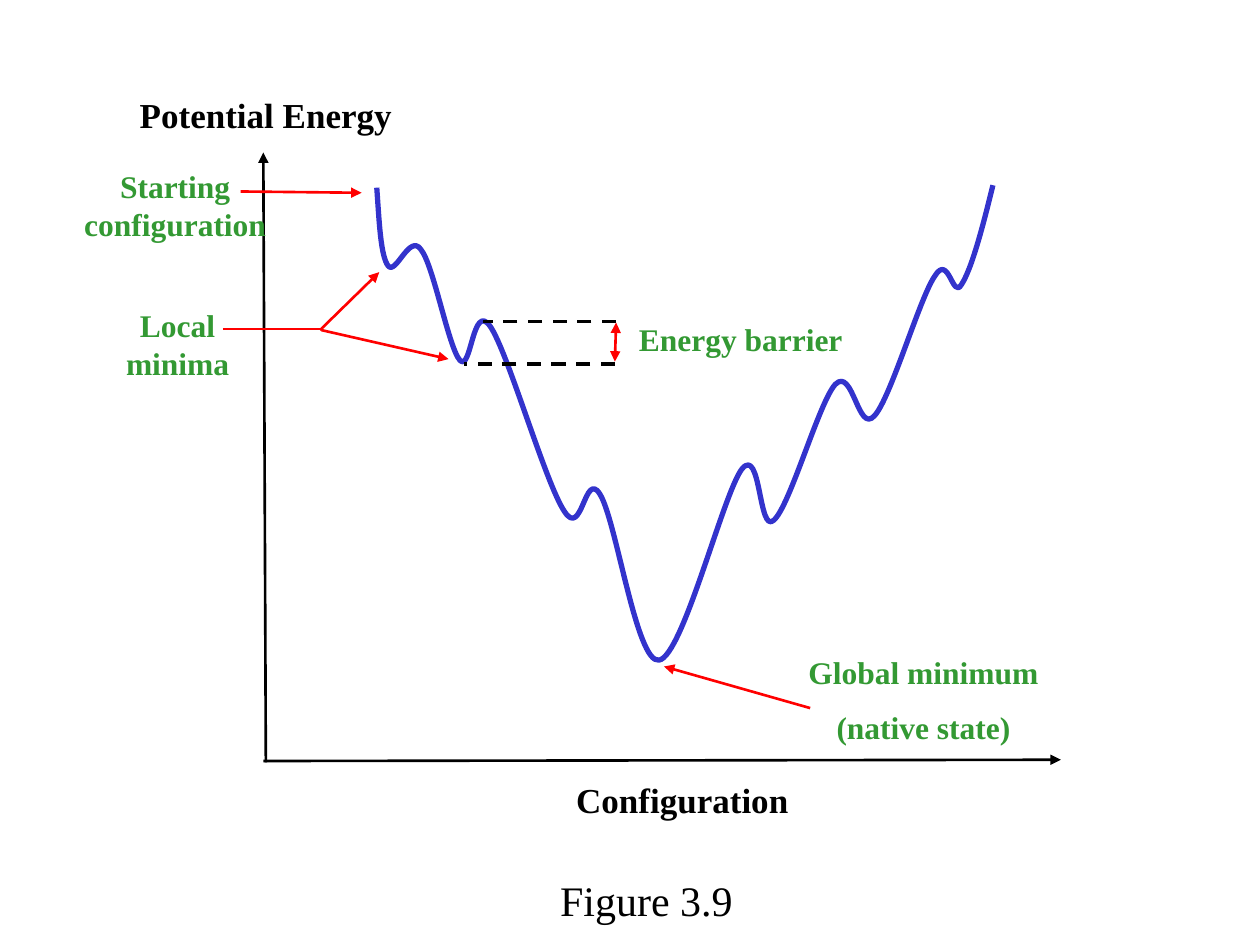
from pptx import Presentation
from pptx.util import Inches, Pt
from pptx.dml.color import RGBColor
from pptx.enum.dml import MSO_LINE
from pptx.enum.shapes import MSO_CONNECTOR
from pptx.enum.text import PP_ALIGN
from pptx.oxml.ns import qn
from lxml.etree import SubElement

WIDE, HIGH = 10, 7.5
COLS, ROWS = 100, 75
BLACK, RED, GREEN, BLUE = "000000", "FF0000", "339933", "3333CC"


def tint(code):
    return RGBColor.from_string(code)


def across(cols):
    return Inches(WIDE * cols / COLS)


def down(rows):
    return Inches(HIGH * rows / ROWS)


class Board:
    font = "Times New Roman"

    def __init__(self, deck):
        self.slide = deck.slides.add_slide(deck.slide_layouts[6])
        self.shapes = self.slide.shapes

    def label(self, text, left, top, width, height, size=18, color=GREEN, bold=True):
        box = self.shapes.add_textbox(across(left), down(top), across(width), down(height))
        frame = box.text_frame
        frame.word_wrap = True
        frame.text = text
        for i, para in enumerate(frame.paragraphs):
            para.alignment = PP_ALIGN.CENTER
            para.space_before = Pt(size * 0.55 if i else 0)
            for run in para.runs:
                run.font.name = self.font
                run.font.size = Pt(size)
                run.font.bold = bold
                run.font.color.rgb = tint(color)

    def line(self, start, end, color=RED, width=1.5, ends=("tailEnd",), dash=False):
        link = self.shapes.add_connector(
            MSO_CONNECTOR.STRAIGHT,
            across(start[0]), down(start[1]), across(end[0]), down(end[1]))
        link.line.color.rgb = tint(color)
        link.line.width = Pt(width)
        if dash:
            link.line.dash_style = MSO_LINE.DASH
        props = link.line._get_or_add_ln()
        for name in ends:
            SubElement(props, qn("a:" + name), type="triangle")
        SubElement(link._element.spPr, qn("a:effectLst"))

    def curve(self, points, color, width):
        spots = [(across(x), down(y)) for x, y in points]
        pen = self.shapes.build_freeform(*spots[0])
        pen.add_line_segments(spots[1:], close=False)
        shape = pen.convert_to_shape()
        shape.shadow.inherit = False
        shape.fill.background()
        shape.line.color.rgb = tint(color)
        shape.line.width = Pt(width)
        track = shape._element.xpath(".//a:path")[0]
        steps = track.findall(qn("a:lnTo"))
        for i in range(0, len(steps), 3):
            bend = SubElement(track, qn("a:cubicBezTo"))
            for step in steps[i:i + 3]:
                bend.append(step[0])
                track.remove(step)


CURVE = [
    (29.9, 14.9),
    (30.1, 17.6), (30.2, 20.3), (30.8, 21.1),
    (31.4, 21.9), (32.5, 18.5), (33.4, 19.8),
    (34.4, 21), (35.6, 27.6), (36.5, 28.6),
    (37.4, 29.6), (37.5, 23.9), (38.9, 25.9),
    (40.3, 27.9), (43.3, 38.4), (44.8, 40.6),
    (46.2, 42.8), (46.4, 37.3), (47.6, 39.2),
    (48.9, 41.2), (50.5, 52.7), (52.3, 52.4),
    (54.2, 52.1), (57.4, 39.1), (58.9, 37.2),
    (60.4, 35.4), (60.2, 42.4), (61.4, 41.3),
    (62.7, 40.2), (65, 31.9), (66.3, 30.5),
    (67.7, 29.1), (68.1, 34.5), (69.4, 33),
    (70.7, 31.6), (73, 23.6), (74.2, 21.9),
    (75.3, 20.1), (75.6, 23.8), (76.3, 22.6),
    (77.1, 21.4), (78, 18), (78.8, 14.7),
]


def main():
    deck = Presentation()
    deck.slide_width, deck.slide_height = Inches(WIDE), Inches(HIGH)
    board = Board(deck)

    board.label("Configuration", 41.7, 61.3, 24.9, 4.3, 20, BLACK)
    board.label("Potential Energy", 8.5, 6.9, 25.2, 4.3, 20, BLACK)
    board.line((21.1, 60.5), (20.9, 12.1), BLACK)
    board.line((20.9, 60.4), (84.2, 60.3), BLACK)
    board.curve(CURVE, BLUE, 3)

    board.label("Local minima", 6.3, 23.8, 15.6, 7)
    board.line((17.7, 26.1), (25.5, 26.1), ends=())
    board.line((48.9, 25.5), (38.3, 25.5), BLACK, 2, (), True)
    board.line((48.8, 28.9), (36.8, 28.9), BLACK, 2, (), True)
    board.label("Starting configuration", 5.5, 12.8, 16.8, 7)
    board.line((19.1, 15.2), (28.7, 15.3))
    board.line((25.4, 26.2), (30.1, 21.6))
    board.line((25.5, 26.2), (35.6, 28.5))

    board.label("Global minimum\n(native state)", 59.5, 51.3, 27.6, 8.5)
    board.line((48.9, 25.6), (48.8, 28.7), ends=("headEnd", "tailEnd"))
    board.label("Energy barrier", 49.5, 24.9, 18.6, 4)
    board.line((64.3, 56.2), (52.7, 52.9))
    board.label("Figure 3.9", 38.3, 68.9, 26, 5.1, 24, BLACK, False)
    deck.save("out.pptx")


if __name__ == "__main__":
    main()
